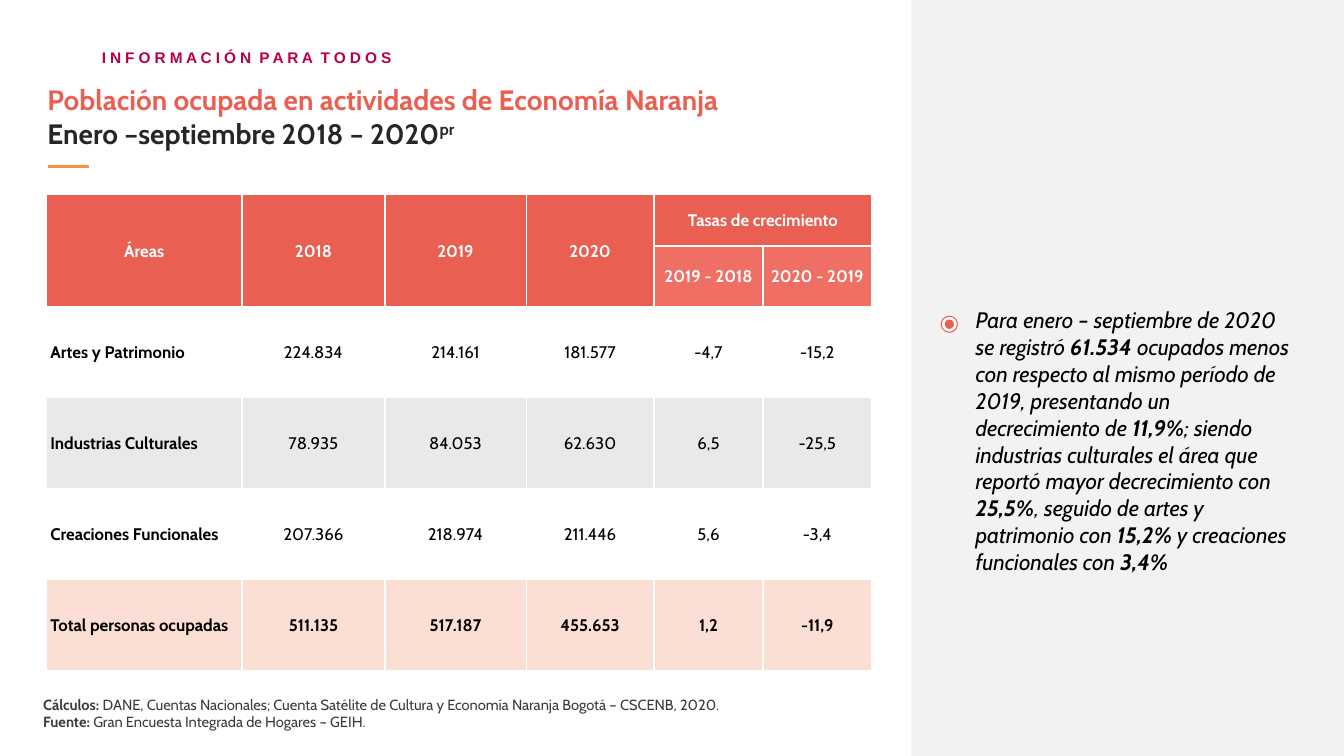
from lxml.etree import SubElement
from pptx import Presentation
from pptx.dml.color import RGBColor
from pptx.enum.shapes import MSO_CONNECTOR, MSO_SHAPE
from pptx.enum.text import MSO_ANCHOR, MSO_AUTO_SIZE, PP_ALIGN
from pptx.oxml.ns import qn
from pptx.util import Pt

CORAL, ROSE, PEACH = "E96052", "EF6F64", "FBDED4"
WHITE, BLACK, GRAY = "FFFFFF", "000000", "E9E9E9"

COLS = [139.7, 102.2, 100.8, 91.4, 77.8, 77.8]
ROWS = [36.7, 43.2] + [65] * 4
HEADS = [
    ["Áreas", "2018", "2019", "2020", "Tasas de crecimiento", ""],
    ["", "", "", "", "2019 - 2018", "2020 - 2019"],
]
AREAS = [
    ["Artes y Patrimonio", "224.834", "214.161", "181.577", "-4,7", "-15,2"],
    ["Industrias Culturales", "78.935", "84.053", "62.630", "6,5", "-25,5"],
    ["Creaciones Funcionales", "207.366", "218.974", "211.446", "5,6", "-3,4"],
    ["Total personas ocupadas", "511.135", "517.187", "455.653", "1,2", "-11,9"],
]
REMARK = (
    "Para enero – septiembre de 2020 se registró *61.534 *ocupados menos con "
    "respecto al mismo período de 2019, presentando un decrecimiento de *11,9%*; "
    "siendo industrias culturales el área que reportó mayor decrecimiento con "
    "*25,5%*, seguido de artes y patrimonio con *15,2% *y creaciones funcionales "
    "con *3,4%*"
)


def tint(code):
    return RGBColor.from_string(code)


def write(par, text, size=12, color=BLACK, bold=False, italic=False,
          face="Cabin", align=None, **attrs):
    """Append text to a paragraph; each asterisk switches bold on or off."""
    if align is not None:
        par.alignment = align
    for order, part in enumerate(text.split("*")):
        if not part:
            continue
        run = par.add_run()
        run.text = part
        font = run.font
        font.size, font.name = Pt(size), face
        font.bold, font.italic = bold != (order % 2 == 1), italic
        font.color.rgb = tint(color)
        for key, value in attrs.items():
            run._r.get_or_add_rPr().set(key, value)


def pad(item, left, top, right, bottom):
    item.margin_left, item.margin_top = Pt(left), Pt(top)
    item.margin_right, item.margin_bottom = Pt(right), Pt(bottom)


def indent(par, left, first=0):
    props = par._p.get_or_add_pPr()
    props.set("marL", str(Pt(left)))
    props.set("indent", str(Pt(first)))


def add_box(slide, left, top, width, height, inset=(7.2, 3.6, 7.2, 3.6), count=1):
    """Add a text box and return its paragraphs."""
    box = slide.shapes.add_textbox(Pt(left), Pt(top), Pt(width), Pt(height))
    frame = box.text_frame
    frame.word_wrap = True
    frame.auto_size = MSO_AUTO_SIZE.SHAPE_TO_FIT_TEXT
    pad(frame, *inset)
    for _ in range(count - 1):
        frame.add_paragraph()
    return frame.paragraphs


def add_form(slide, kind, left, top, width, height, fill, edge=None):
    form = slide.shapes.add_shape(kind, Pt(left), Pt(top), Pt(width), Pt(height))
    form.shadow.inherit = False
    form.fill.solid()
    form.fill.fore_color.rgb = tint(fill)
    if edge:
        form.line.color.rgb = tint(edge)
        form.line.width = Pt(0.75)
    else:
        form.line.fill.background()


def add_dot(slide, x, y, size, fill, edge=None):
    add_form(slide, MSO_SHAPE.OVAL, x - size / 2, y - size / 2, size, size, fill, edge)


def add_rule(slide, left, right, y, color):
    rule = slide.shapes.add_connector(
        MSO_CONNECTOR.STRAIGHT, Pt(left), Pt(y), Pt(right), Pt(y))
    rule.line.color.rgb = tint(color)
    rule.line.width = Pt(2.25)
    SubElement(rule._element.spPr, qn("a:effectLst"))


def frame_cell(cell):
    """Give a cell white borders on its four sides."""
    props = cell._tc.get_or_add_tcPr()
    for side in ("lnL", "lnR", "lnT", "lnB"):
        edge = SubElement(props, qn("a:" + side), w=str(Pt(1)))
        fill = SubElement(edge, qn("a:solidFill"))
        SubElement(fill, qn("a:srgbClr"), val=WHITE)


def add_grid(slide, left, top):
    rows = HEADS + AREAS
    grid = slide.shapes.add_table(
        len(ROWS), len(COLS), Pt(left), Pt(top), Pt(sum(COLS)), Pt(sum(ROWS))).table
    grid.horz_banding = False
    for col, width in zip(grid.columns, COLS):
        col.width = Pt(width)
    for row, height in zip(grid.rows, ROWS):
        row.height = Pt(height)
    for col in range(4):
        grid.cell(0, col).merge(grid.cell(1, col))
    grid.cell(0, 4).merge(grid.cell(0, 5))

    fills = [CORAL, ROSE, WHITE, GRAY, WHITE, PEACH]
    for r, texts in enumerate(rows):
        head, total = r < len(HEADS), r == len(rows) - 1
        for c, text in enumerate(texts):
            cell = grid.cell(r, c)
            frame_cell(cell)
            cell.fill.solid()
            cell.fill.fore_color.rgb = tint(fills[r])
            cell.vertical_anchor = MSO_ANCHOR.MIDDLE
            pad(cell, 2.9, 0.7, 2.9, 0)
            name = c == 0 and not head
            write(cell.text_frame.paragraphs[0], text,
                  color=WHITE if head else BLACK, bold=head or total or name,
                  align=PP_ALIGN.LEFT if name else PP_ALIGN.CENTER)


def add_title(slide):
    first, second = add_box(slide, 23, 54, 754.6, 58.3, (9.4, 5, 9.4, 5), 2)
    for par in (first, second):
        indent(par, 1.4)
    write(first, "Población ocupada en actividades de Economía Naranja",
          size=20, color=CORAL, bold=True)
    dark = dict(size=20, color="262626", bold=True)
    write(second, "Enero –septiembre 2018 – 2020", **dark)
    write(second, "pr", baseline="30000", **dark)


def main():
    deck = Presentation()
    deck.slide_width, deck.slide_height = Pt(960), Pt(540)
    slide = deck.slides.add_slide(deck.slide_layouts[6])

    banner = add_box(slide, 71.3, 28.8, 295.2, 18, (0, 1.4, 0, 0))[0]
    indent(banner, 2.9, -1.4)
    banner.line_spacing = 1.3
    write(banner, "I N F O R M A C I Ó N  P A R A  T O D O S", size=11,
          color="B6004C", bold=True, face="Arial", align=PP_ALIGN.JUSTIFY, spc="-10")

    add_form(slide, MSO_SHAPE.RECTANGLE, 651, 0, 309, 540, "F2F2F2")
    add_dot(slide, 678.1, 231.6, 11.6, WHITE, CORAL)
    add_dot(slide, 678.1, 231.6, 6.6, CORAL)

    notes = add_box(slide, 23.8, 493.2, 756, 33.8, count=2)
    for par, text in zip(notes, [
        "*Cálculos: *DANE, Cuentas Nacionales; Cuenta Satélite de Cultura y "
        "Economía Naranja Bogotá – CSCENB, 2020.",
        "*Fuente: *Gran Encuesta Integrada de Hogares – GEIH.",
    ]):
        write(par, text, size=10.5, color="3D3C3B")

    remark = add_box(slide, 689.8, 215.3, 242.6, 200.9)[0]
    write(remark, REMARK, size=16, italic=True)

    add_title(slide)
    add_rule(slide, 34.6, 63.4, 118.8, "F69240")
    add_grid(slide, 33.1, 139)
    deck.save("out.pptx")


if __name__ == "__main__":
    main()
